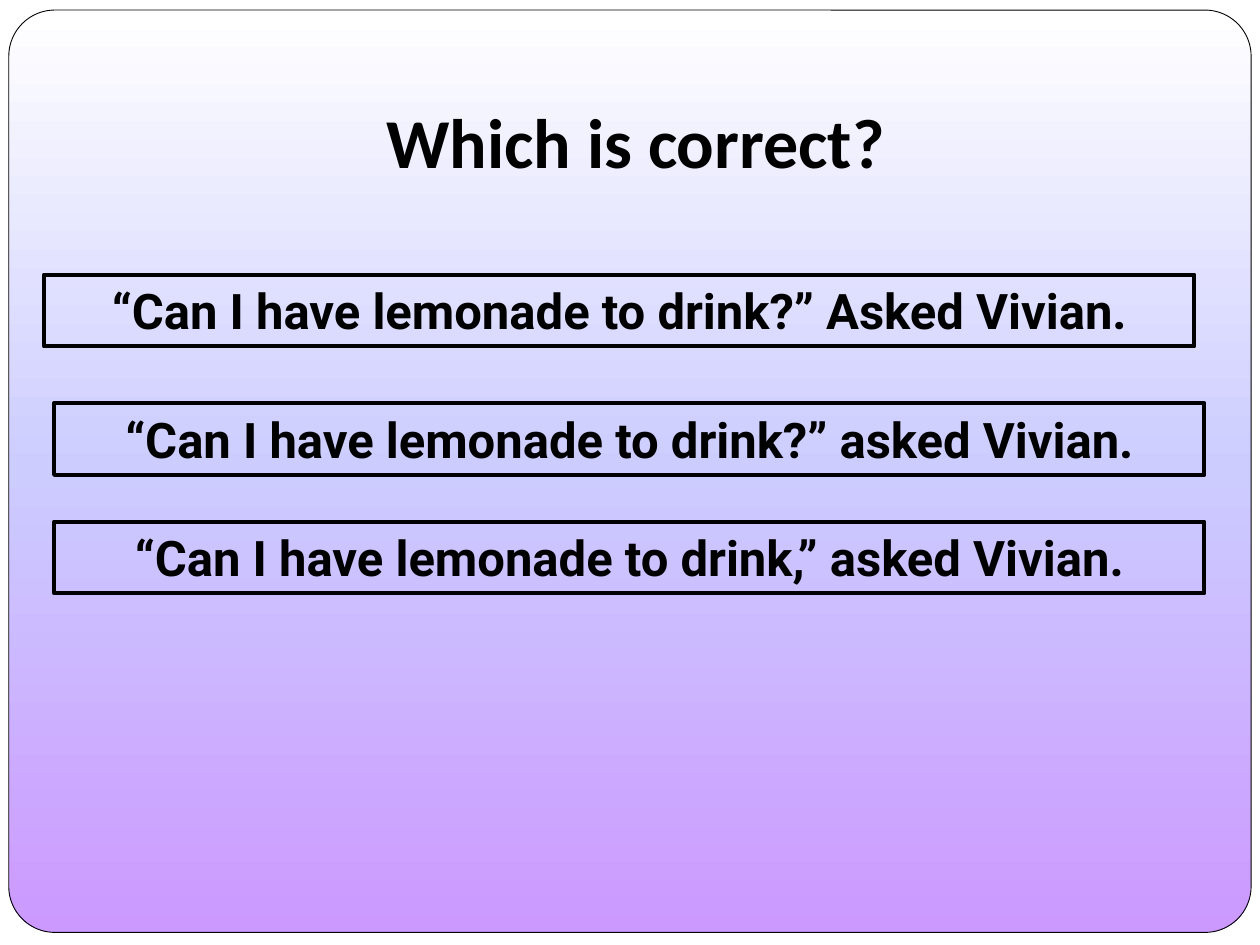
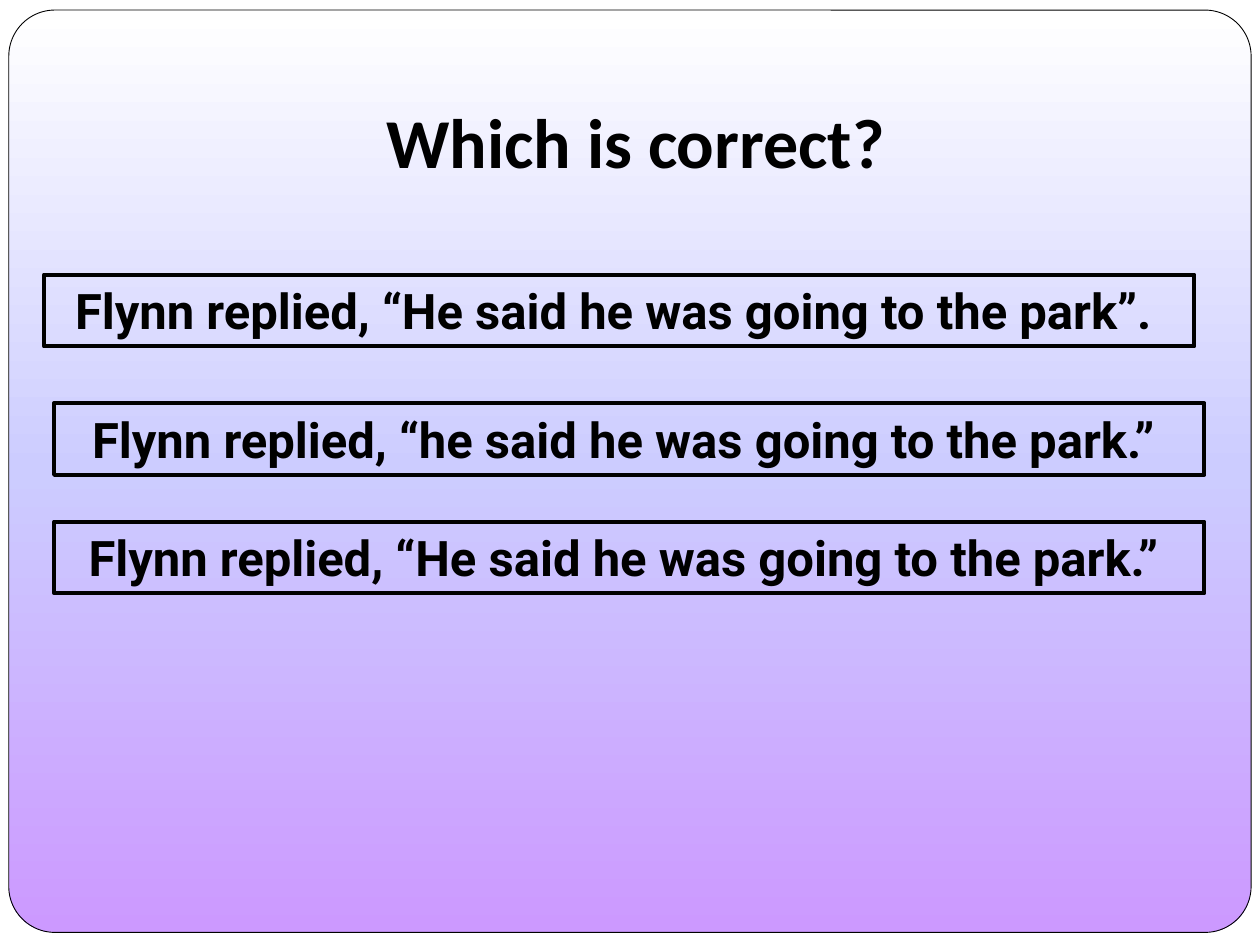
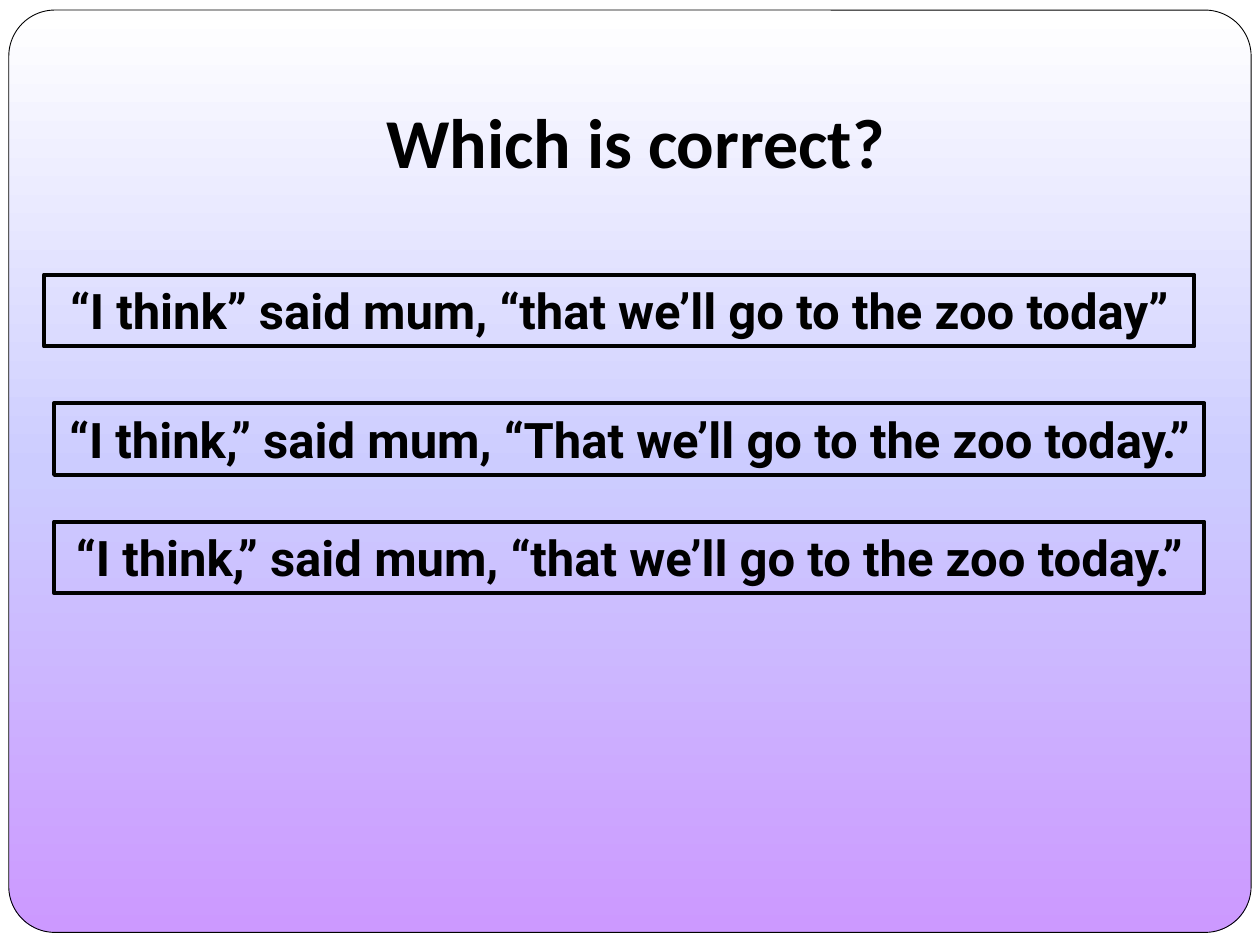
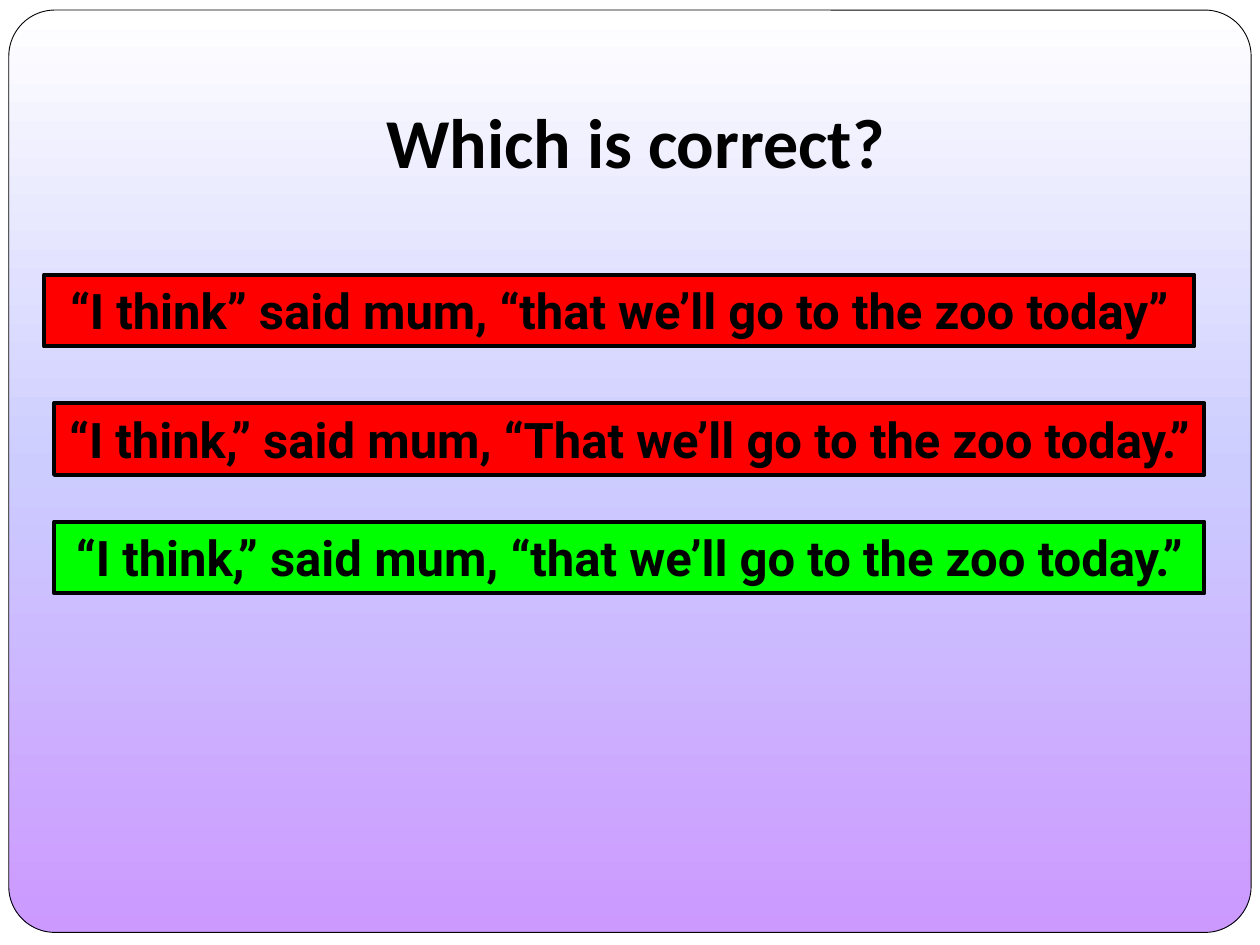
from copy import deepcopy
from dataclasses import dataclass

from pptx import Presentation
from pptx import util as u
from pptx.dml.color import RGBColor
from pptx.enum import shapes, text
from pptx.oxml.ns import qn


@dataclass(frozen=True)
class Theme:
    ink: str = "000000"
    page: str = "FFFFFF"
    gradient: tuple = ((0, "FFFFFF"), (0.5, "CCCCFF"), (1, "CC99FF"))
    wrong: str = "FF0000"
    right: str = "00FF00"
    title_font: str = "Calibri"
    title_size: int = 40
    answer_font: str = "Roboto"
    answer_size: int = 28
    panel_line: float = 0.5
    answer_line: float = 2.25


theme = Theme()


def add_box(slide, preset, bounds, line_width):
    """Add an unfilled, shadowless shape; bounds are in inches."""
    shape = slide.shapes.add_shape(preset, *map(u.Inches, bounds))
    shape.shadow.inherit = False
    shape.fill.background()
    shape.line.color.rgb = RGBColor.from_string(theme.ink)
    shape.line.width = u.Pt(line_width)
    return shape


def write_text(shape, wording, font_name, font_size, frame_format):
    """Write one centred bold line, with frame_format set on the text frame."""
    frame = shape.text_frame
    for name, value in {"word_wrap": True, **frame_format}.items():
        setattr(frame, name, value)
    paragraph = frame.paragraphs[0]
    paragraph.text = wording
    paragraph.alignment = text.PP_ALIGN.CENTER
    font_format = {"name": font_name, "size": u.Pt(font_size), "bold": True}
    for name, value in font_format.items():
        setattr(paragraph.runs[0].font, name, value)
    paragraph.runs[0].font.color.rgb = RGBColor.from_string(theme.ink)


title_bounds = (0.59, 0.3, 8.91, 1.25)
title_frame = {
    "vertical_anchor": text.MSO_ANCHOR.BOTTOM,
    "margin_bottom": u.Inches(0.1),
}
panel_bounds = (0.07, 0.08, 9.86, 7.32)
answer_positions = ((0.35, 2.18), (0.43, 3.2), (0.43, 4.14))
answer_size = (9.13, 0.57)
answer_frame = {
    "vertical_anchor": text.MSO_ANCHOR.TOP,
    "auto_size": text.MSO_AUTO_SIZE.SHAPE_TO_FIT_TEXT,
}

lemonade = (
    "“Can I have lemonade to drink?” Asked Vivian.",
    "“Can I have lemonade to drink?” asked Vivian.",
    "“Can I have lemonade to drink,” asked Vivian.",
)
park = (
    "Flynn replied, “He said he was going to the park”. ",
    "Flynn replied, “he said he was going to the park.” ",
    "Flynn replied, “He said he was going to the park.” ",
)
zoo = (
    "“I think” said mum, “that we’ll go to the zoo today”",
    "“I think,” said mum, “That we’ll go to the zoo today.”",
    "“I think,” said mum, “that we’ll go to the zoo today.”",
)
unmarked = (None, None, None)
marked = (theme.wrong, theme.wrong, theme.right)
questions = ((lemonade, unmarked), (park, unmarked), (zoo, unmarked), (zoo, marked))

presentation = Presentation()
presentation.slide_width = u.Inches(10)
presentation.slide_height = u.Inches(7.5)
blank_layout = presentation.slide_layouts[6]

for answers, marks in questions:
    slide = presentation.slides.add_slide(blank_layout)
    slide.background.fill.solid()
    slide.background.fill.fore_color.rgb = RGBColor.from_string(theme.page)

    panel = add_box(
        slide, shapes.MSO_SHAPE.ROUNDED_RECTANGLE, panel_bounds, theme.panel_line
    )
    panel.adjustments[0] = 0.05
    panel.fill.gradient()
    panel.fill.gradient_angle = 270
    stop_list = panel.element.spPr.find(".//" + qn("a:gsLst"))
    stop_list.append(deepcopy(stop_list[-1]))
    for stop, (position, colour) in zip(panel.fill.gradient_stops, theme.gradient):
        stop.position = position
        stop.color.rgb = RGBColor.from_string(colour)

    title = slide.shapes.add_textbox(*map(u.Inches, title_bounds))
    write_text(
        title, "Which is correct?", theme.title_font, theme.title_size, title_frame
    )

    for position, answer, mark in zip(answer_positions, answers, marks):
        answer_box = add_box(
            slide,
            shapes.MSO_SHAPE.RECTANGLE,
            position + answer_size,
            theme.answer_line,
        )
        if mark:
            answer_box.fill.solid()
            answer_box.fill.fore_color.rgb = RGBColor.from_string(mark)
        write_text(
            answer_box, answer, theme.answer_font, theme.answer_size, answer_frame
        )

presentation.save("out.pptx")
